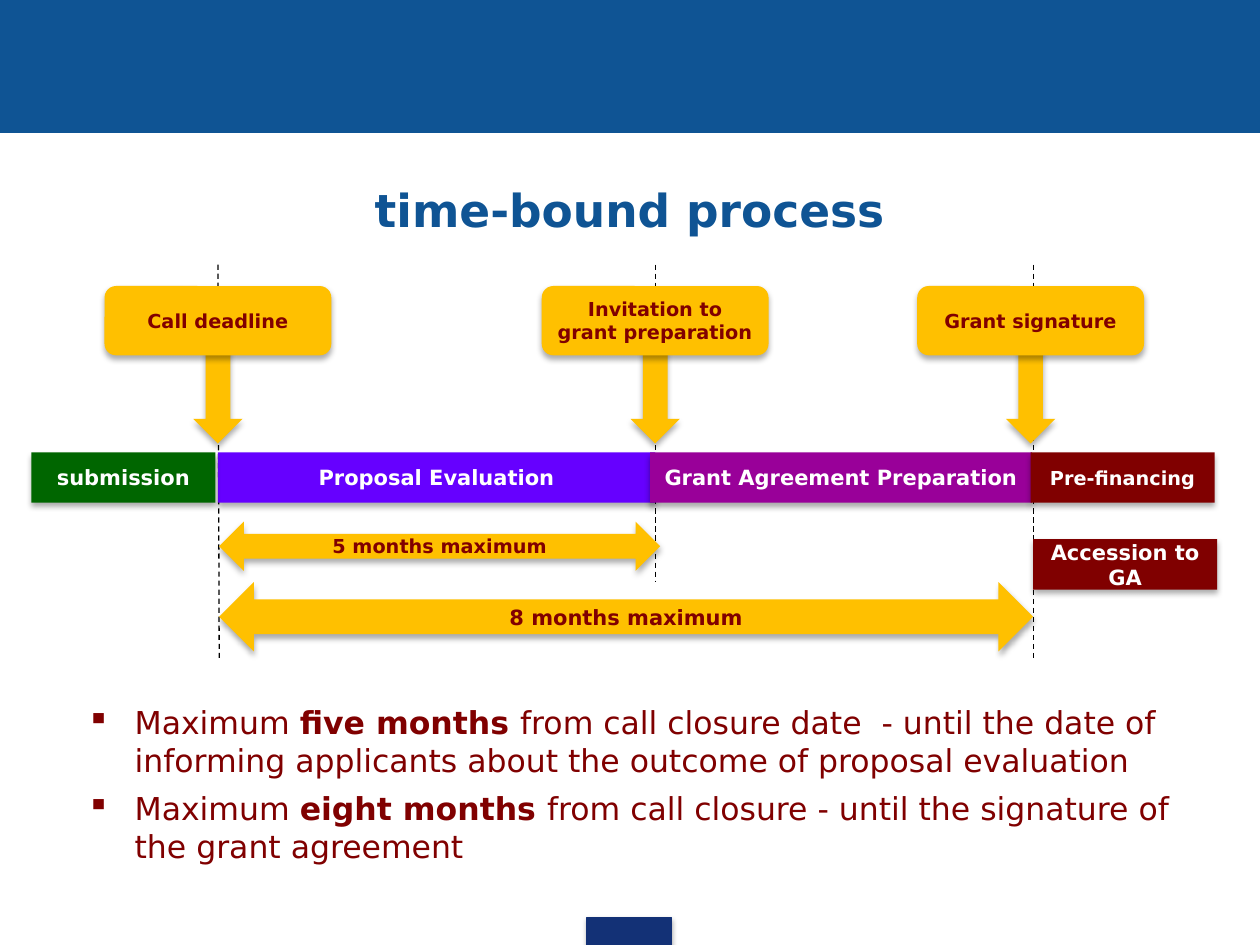
from lxml import etree
from pptx import Presentation
from pptx.dml.color import RGBColor
from pptx.enum.dml import MSO_LINE
from pptx.enum.shapes import MSO_CONNECTOR, MSO_SHAPE
from pptx.enum.text import MSO_ANCHOR, MSO_AUTO_SIZE, PP_ALIGN
from pptx.oxml.ns import qn
from pptx.util import Inches, Pt

RECT, ROUND = MSO_SHAPE.RECTANGLE, MSO_SHAPE.ROUNDED_RECTANGLE
DOWN, SPAN = MSO_SHAPE.DOWN_ARROW, MSO_SHAPE.LEFT_RIGHT_ARROW
MIDDLE, CENTER = MSO_ANCHOR.MIDDLE, PP_ALIGN.CENTER
FONT = "DejaVu Sans"

BLUE = RGBColor(0x0F, 0x54, 0x94)
NAVY = RGBColor(0x13, 0x31, 0x76)
GOLD = RGBColor(0xFF, 0xC0, 0x00)
MAROON = RGBColor(0x80, 0x00, 0x00)
GREEN = RGBColor(0x00, 0x66, 0x00)
VIOLET = RGBColor(0x66, 0x00, 0xFF)
PURPLE = RGBColor(0x99, 0x00, 0x99)
WHITE = RGBColor(0xFF, 0xFF, 0xFF)
BLACK = RGBColor(0x00, 0x00, 0x00)

# Content
TITLE = "time-bound process"
# label, centre of its box and arrow
EVENTS = [
    ("Invitation to grant preparation", 5.2),
    ("Grant signature", 8.18),
    ("Call deadline", 1.73),
]
# start x, end x, bottom
DATES = [(1.73, 1.74, 5.25), (5.2, 5.2, 4.62), (8.2, 8.2, 5.25)]
# label, left, top, width, colour, size
PHASES = [
    ("Proposal Evaluation", 1.73, 3.59, 3.47, VIOLET, 12),
    ("Grant Agreement Preparation", 5.16, 3.59, 3.03, PURPLE, 12),
    ("Pre-financing", 8.18, 3.59, 1.46, MAROON, 11),
    ("submission", 0.25, 3.59, 1.46, GREEN, 12),
    ("Accession to GA", 8.2, 4.28, 1.46, MAROON, 12),
]
# label, top, width, height, size
SPANS = [
    ("5 months maximum", 4.14, 3.5, 0.39, 11),
    ("8 months maximum", 4.62, 6.46, 0.55, 12),
]
# plain, bold, plain
NOTES = [
    ("Maximum ", "five months ",
     "from call closure date  - until the date of informing applicants "
     "about the outcome of proposal evaluation"),
    ("Maximum ", "eight months ",
     "from call closure - until the signature of the grant agreement"),
]

WIDE, HIGH = 10, 7.5
BOX_W, BOX_H, BOX_TOP = 1.8, 0.55, 2.27
ARROW_W, ARROW_H, ARROW_TOP = 0.39, 0.79, 2.73
PHASE_H = 0.4

prs = Presentation()
prs.slide_width, prs.slide_height = Inches(WIDE), Inches(HIGH)
slide = prs.slides.add_slide(prs.slide_layouts[5])
shapes = slide.shapes


def style(para, size, color, bold=None):
    font = para.font
    font.name, font.size, font.bold = FONT, Pt(size), bold
    font.color.rgb = color


def add_shadow(shape, alpha, blur, dist):
    effects = shape._element.spPr.find(qn("a:effectLst"))
    outer = etree.SubElement(
        effects, qn("a:outerShdw"), blurRad=str(Pt(blur)),
        dist=str(Pt(dist)), dir="5400000", rotWithShape="0")
    black = etree.SubElement(outer, qn("a:srgbClr"), val="000000")
    etree.SubElement(black, qn("a:alpha"), val=str(alpha * 1000))


def add_block(kind, box, fill, label="", size=12, color=MAROON,
              shadow=(32, 3.5, 2.2), edge=False):
    shape = shapes.add_shape(kind, *map(Inches, box))
    shape.fill.solid()
    shape.fill.fore_color.rgb = fill
    if edge:
        shape.line.color.rgb = fill
        shape.line.width = Pt(0.75)
    else:
        shape.line.fill.background()
    shape.shadow.inherit = False
    if shadow:
        add_shadow(shape, *shadow)
    if label:
        frame = shape.text_frame
        frame.vertical_anchor = MIDDLE
        para = frame.paragraphs[0]
        para.text, para.alignment = label, CENTER
        style(para, size, color, True)


# Top band and foot mark
add_block(RECT, (0, 0, WIDE, 1.05), BLUE, shadow=None, edge=True)
add_block(RECT, (4.66, 7.28, 0.67, 0.22), NAVY, shadow=(35, 3.1, 1.8),
          edge=True)

# Title
title = shapes.title
title.left, title.top, title.width, title.height = map(
    Inches, (0, 1.39, WIDE, 0.54))
title.text_frame.text = TITLE
title.text_frame.vertical_anchor = MIDDLE
head = title.text_frame.paragraphs[0]
head.alignment = CENTER
style(head, 26, BLUE, True)

# Dashed date lines
for start, end, bottom in DATES:
    line = shapes.add_connector(
        MSO_CONNECTOR.STRAIGHT, *map(Inches, (start, 2.1, end, bottom)))
    line.line.color.rgb = BLACK
    line.line.width = Pt(0.75)
    line.line.dash_style = MSO_LINE.DASH
    etree.SubElement(line._element.spPr, qn("a:effectLst"))

# Event arrows, spans, then event boxes over the arrows
for _, mid in EVENTS:
    add_block(DOWN, (mid - ARROW_W / 2, ARROW_TOP, ARROW_W, ARROW_H), GOLD)
for label, top, width, height, size in SPANS:
    add_block(SPAN, (1.74, top, width, height), GOLD, label, size)
for label, mid in EVENTS:
    add_block(ROUND, (mid - BOX_W / 2, BOX_TOP, BOX_W, BOX_H), GOLD, label, 11)

# Phases
for label, left, top, width, fill, size in PHASES:
    add_block(RECT, (left, top, width, PHASE_H), fill, label, size, WHITE)

# Bulleted notes
notes = shapes.add_textbox(*map(Inches, (0.59, 5.53, 9.08, 1.4))).text_frame
notes.word_wrap = True
notes.auto_size = MSO_AUTO_SIZE.SHAPE_TO_FIT_TEXT
for i, parts in enumerate(NOTES):
    para = notes.add_paragraph() if i else notes.paragraphs[0]
    props = para._p.get_or_add_pPr()
    props.set("marL", str(Inches(0.38)))
    props.set("indent", str(-Inches(0.38)))
    etree.SubElement(props, qn("a:buChar"), char="▪")
    para.space_after = Pt(6)
    style(para, 18, MAROON)
    for j, part in enumerate(parts):
        run = para.add_run()
        run.text, run.font.bold = part, j == 1

prs.save("out.pptx")
